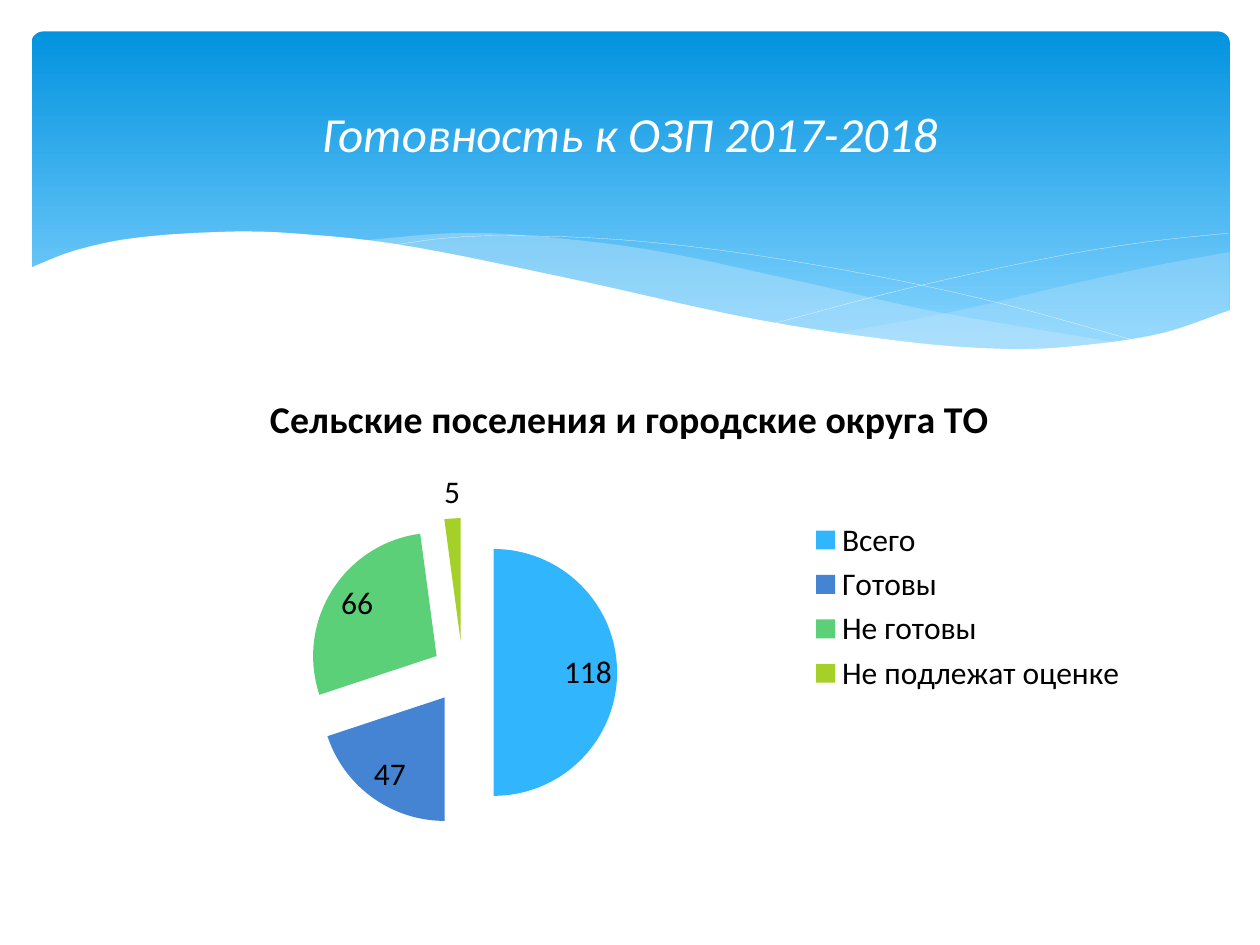
from lxml import etree
from pptx import Presentation
from pptx.chart.data import CategoryChartData
from pptx.dml.color import RGBColor
from pptx.enum.chart import XL_CHART_TYPE, XL_LABEL_POSITION, XL_LEGEND_POSITION
from pptx.enum.shapes import MSO_SHAPE
from pptx.enum.text import MSO_ANCHOR, PP_ALIGN
from pptx.oxml.ns import qn
from pptx.util import Inches, Pt

ROUNDED = MSO_SHAPE.ROUNDED_RECTANGLE
PIE = XL_CHART_TYPE.PIE
BEST_FIT = XL_LABEL_POSITION.BEST_FIT
LEGEND_RIGHT = XL_LEGEND_POSITION.RIGHT
MIDDLE = MSO_ANCHOR.MIDDLE
CENTER = PP_ALIGN.CENTER

FONT = "Calibri"
COLORS = {
    "white": "FFFFFF",
    "text": "000000",
    "banner_top": "0293E0",
    "banner_bottom": "83D3FE",
    "wave": "C6E7FC",
    "total": "31B6FD",
    "ready": "4584D3",
    "not_ready": "5BD078",
    "not_assessed": "A5D028",
}
HEADING = "Сельские поселения и городские округа ТО"
SECTORS = [
    ("Всего", 118, "total"),
    ("Готовы", 47, "ready"),
    ("Не готовы", 66, "not_ready"),
    ("Не подлежат оценке", 5, "not_assessed"),
]

# Each curve is a few knots from left to right, in inches; smooth() fills the gaps.
RIGHT_WAVE_TOP = [(6.61, 2.65), (7.53, 2.48), (8.61, 2.23), (9.21, 2.1), (9.76, 2)]
RIGHT_WAVE_BOTTOM = [
    (6.61, 2.65), (7.32, 2.74), (8.03, 2.78), (8.72, 2.74), (9.28, 2.63), (9.76, 2.47)]
MIDDLE_WAVE_TOP = [
    (2.86, 1.91), (3.61, 1.85), (4.2, 1.87), (5.14, 1.98), (6.29, 2.22), (7.41, 2.47),
    (8.93, 2.73)]
MIDDLE_WAVE_BOTTOM = [
    (2.86, 1.91), (3.62, 2.03), (4.49, 2.22), (6.01, 2.55), (7.22, 2.74), (8.18, 2.78),
    (8.93, 2.73)]
FALLING_LINE = [
    (3.09, 1.95), (3.53, 1.89), (4.01, 1.87), (4.89, 1.9), (5.82, 2), (6.95, 2.19),
    (7.95, 2.41), (9.07, 2.72)]
RISING_LINE = [(6.13, 2.57), (7.2, 2.29), (8.36, 2.04), (9.1, 1.92), (9.75, 1.85)]
FRONT_WAVE_TOP = [
    (0.23, 2.13), (0.59, 1.99), (1.06, 1.89), (1.77, 1.84), (2.3, 1.85), (3.16, 1.94),
    (4.47, 2.2), (6.03, 2.54), (7.26, 2.72), (8, 2.77), (8.5, 2.75), (9.2, 2.65),
    (9.77, 2.46)]
FRONT_WAVE_BOTTOM = [(0.23, 3.29), (9.77, 3.29)]
STEPS_PER_SPAN = 10


def rgb(name):
    return RGBColor.from_string(COLORS[name])


def style_font(font, size, color, bold=False, italic=False):
    font.name = FONT
    font.size = Pt(size)
    font.bold = bold
    font.italic = italic
    font.color.rgb = rgb(color)


def smooth(knots):
    """Points of a cubic Hermite curve whose slopes come from neighbouring knots."""
    slopes = []
    for index in range(len(knots)):
        before = knots[max(index - 1, 0)]
        after = knots[min(index + 1, len(knots) - 1)]
        slopes.append((after[1] - before[1]) / (after[0] - before[0]))

    points = [knots[0]]
    for index in range(len(knots) - 1):
        (x0, y0), (x1, y1) = knots[index:index + 2]
        span = x1 - x0
        for step in range(1, STEPS_PER_SPAN + 1):
            t = step / STEPS_PER_SPAN
            blend = t * t * (3 - 2 * t)
            start_pull = t * (1 - t) ** 2 * span * slopes[index]
            end_pull = t * t * (t - 1) * span * slopes[index + 1]
            points.append((x0 + span * t,
                           y0 + (y1 - y0) * blend + start_pull + end_pull))
    return points


def add_outline(slide, points, closed):
    corners = [(Inches(x), Inches(y)) for x, y in points]
    builder = slide.shapes.build_freeform(*corners[0])
    builder.add_line_segments(corners[1:], close=closed)
    shape = builder.convert_to_shape()
    shape.shadow.inherit = False
    return shape


def add_wave(slide, top, bottom, color, opacity=100):
    """Fill the area between two curves; opacity is a percentage."""
    wave = add_outline(slide, smooth(top) + smooth(bottom)[::-1], closed=True)
    wave.line.fill.background()
    wave.fill.solid()
    wave.fill.fore_color.rgb = rgb(color)
    if opacity < 100:
        color_element = wave._element.spPr.find(qn("a:solidFill"))[0]
        etree.SubElement(color_element, qn("a:alpha"), val=str(opacity * 1000))


def add_curve(slide, knots):
    curve = add_outline(slide, smooth(knots), closed=False)
    curve.fill.background()
    curve.line.color.rgb = rgb("white")
    curve.line.width = Pt(0.1)


def add_banner(slide):
    banner = slide.shapes.add_shape(
        ROUNDED, Inches(0.25), Inches(0.25), Inches(9.51), Inches(2.7))
    banner.adjustments[0] = 0.034
    banner.shadow.inherit = False
    banner.line.fill.background()
    banner.fill.gradient()
    banner.fill.gradient_angle = 270
    stops = ((0, "banner_top"), (0.9, "banner_bottom"))
    for stop, (position, color) in zip(banner.fill.gradient_stops, stops):
        stop.position = position
        stop.color.rgb = rgb(color)


def add_pie(slide):
    data = CategoryChartData()
    data.categories = [name for name, _, _ in SECTORS]
    data.add_series(HEADING, [value for _, value, _ in SECTORS])
    chart = slide.shapes.add_chart(
        PIE, Inches(0.95), Inches(2.93), Inches(8.1), Inches(3.77), data).chart
    style_font(chart.font, 18, "text")

    chart.has_title = True
    run = chart.chart_title.text_frame.paragraphs[0].add_run()
    run.text = HEADING
    style_font(run.font, 21.6, "text", bold=True)
    chart.chart_title.include_in_layout = False

    chart.has_legend = True
    chart.legend.position = LEGEND_RIGHT
    chart.legend.include_in_layout = False

    plot = chart.plots[0]
    plot.vary_by_categories = True
    series = plot.series[0]
    for index, (_, _, color) in enumerate(SECTORS):
        fill = series.points[index].format.fill
        fill.solid()
        fill.fore_color.rgb = rgb(color)
    explosion = etree.Element(qn("c:explosion"), val="25")
    series._element.find(qn("c:dPt")).addprevious(explosion)

    labels = series.data_labels
    labels.show_value = True
    labels.position = BEST_FIT
    style_font(labels.font, 18, "text")


def add_title(slide):
    box = slide.shapes.add_textbox(Inches(0.5), Inches(0.37), Inches(9), Inches(1.37))
    frame = box.text_frame
    frame.word_wrap = True
    frame.vertical_anchor = MIDDLE
    paragraph = frame.paragraphs[0]
    paragraph.alignment = CENTER
    run = paragraph.add_run()
    run.text = "Готовность к ОЗП 2017-2018"
    style_font(run.font, 28, "white", italic=True)


def main():
    presentation = Presentation()
    presentation.slide_width = Inches(10)
    presentation.slide_height = Inches(7.5)
    slide = presentation.slides.add_slide(presentation.slide_layouts[6])
    add_banner(slide)
    add_wave(slide, RIGHT_WAVE_TOP, RIGHT_WAVE_BOTTOM, "wave", opacity=29)
    add_wave(slide, MIDDLE_WAVE_TOP, MIDDLE_WAVE_BOTTOM, "wave", opacity=40)
    for knots in (FALLING_LINE, RISING_LINE):
        add_curve(slide, knots)
    add_wave(slide, FRONT_WAVE_TOP, FRONT_WAVE_BOTTOM, "white")
    add_pie(slide)
    add_title(slide)
    presentation.save("out.pptx")


if __name__ == "__main__":
    main()
